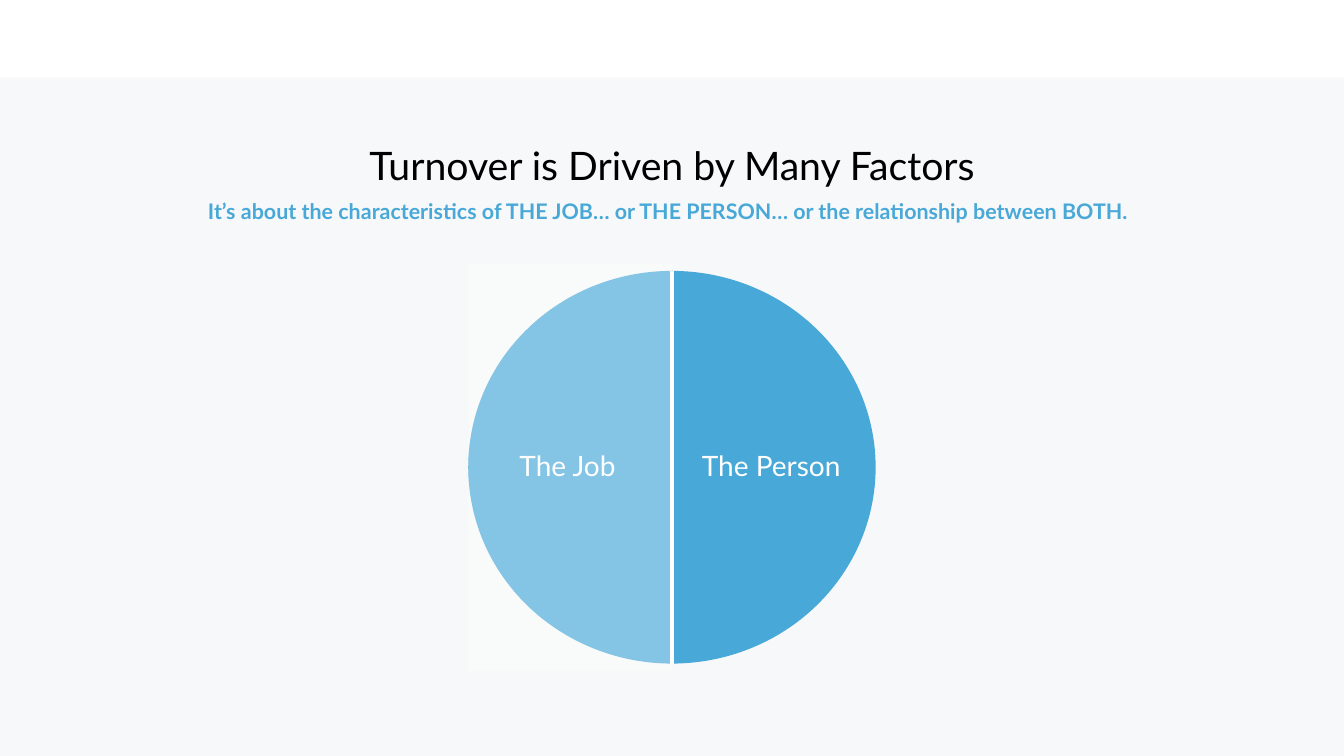
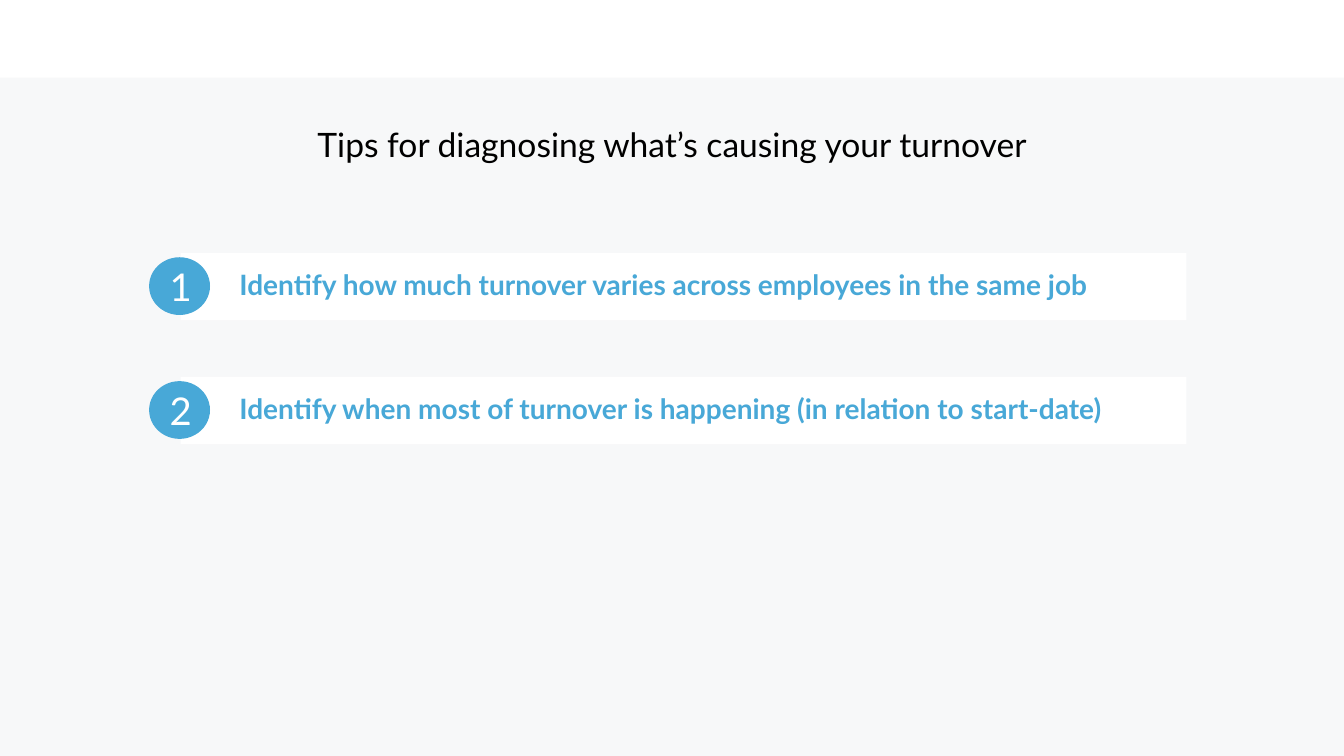
from dataclasses import dataclass

from lxml import etree
from pptx import Presentation, util as u
from pptx.dml import color
from pptx.enum import shapes, text
from pptx.oxml import ns

PX = 9525
SLIDE_W, SLIDE_H, BAND_H = 1280, 720, 74


@dataclass(frozen=True)
class Theme:
    """Colours, font and type sizes shared by the slides."""
    page: str = "F7F8F9"
    white: str = "FFFFFF"
    ink: str = "000000"
    blue: str = "48A8D7"
    font: str = "Lato"
    headline: float = 28
    heading: float = 24
    number: float = 27.3
    body: float = 20
    subtitle: float = 15.3


THEME = Theme()
CENTER, LEFT = text.PP_ALIGN.CENTER, text.PP_ALIGN.LEFT
TOP, MIDDLE = text.MSO_ANCHOR.TOP, text.MSO_ANCHOR.MIDDLE


def px(*lengths):
    """Turn px lengths into EMU."""
    return [u.Emu(length * PX) for length in lengths]


def rgb(value):
    """Turn a hex string into a colour."""
    return color.RGBColor.from_string(value)


def write(shape, words, size, ink, bold=False, align=CENTER, anchor=TOP,
          inset=(0, 0), spacing=1.0):
    """Put one formatted run into a shape."""
    frame = shape.text_frame
    frame.word_wrap = True
    frame.auto_size = text.MSO_AUTO_SIZE.NONE
    frame.vertical_anchor = anchor
    frame.margin_left, frame.margin_top = px(*inset)
    frame.margin_right, frame.margin_bottom = px(*inset)
    paragraph = frame.paragraphs[0]
    paragraph.alignment = align
    paragraph.line_spacing = spacing
    run = paragraph.add_run()
    run.text = words
    font = run.font
    font.name, font.size, font.bold = THEME.font, u.Pt(size), bold
    font.color.rgb = rgb(ink)


def add_text(parent, box, words, size, ink, **style):
    """Add a text box."""
    write(parent.add_textbox(*px(*box)), words, size, ink, **style)


def add_filled(parent, kind, box, fill):
    """Add a flat shape without outline."""
    shape = parent.add_shape(kind, *px(*box))
    shape.shadow.inherit = False
    shape.fill.solid()
    shape.fill.fore_color.rgb = rgb(fill)
    shape.line.fill.background()
    return shape


def set_title(slide, box, words, size, spacing):
    """Place and format the title placeholder."""
    title = slide.shapes.title
    title.left, title.top, title.width, title.height = px(*box)
    write(title, words, size, THEME.ink, inset=(11, 11), spacing=spacing)


def set_master(prs, slide):
    """Give the master its background and top band."""
    master = prs.slide_master
    master.background.fill.solid()
    master.background.fill.fore_color.rgb = rgb(THEME.page)
    band = add_filled(slide.shapes, shapes.MSO_SHAPE.RECTANGLE,
                      (0, 0, SLIDE_W, BAND_H), THEME.white)
    master.shapes._spTree.insert(2, band._element)


def add_split_circle(slide, box, labels):
    """Draw a circle in two halves, the left one lightened, with labels."""
    left, top, width, height = box
    half, overhang, inset, label_h = width // 2, 7, 15, 38
    add_filled(slide.shapes, shapes.MSO_SHAPE.OVAL, box, THEME.blue)
    veil = add_filled(slide.shapes, shapes.MSO_SHAPE.RECTANGLE,
                      (left, top - overhang, half, height + 2 * overhang), THEME.white)
    veil_color = veil._element.spPr.find(ns.qn("a:solidFill"))[0]
    etree.SubElement(veil_color, ns.qn("a:alpha"), val="33000")
    middle = left + half
    divider = slide.shapes.add_connector(
        shapes.MSO_CONNECTOR.STRAIGHT, *px(middle, top, middle, top + height))
    divider.line.color.rgb = rgb(THEME.white)
    divider.line.width = u.Pt(2.25)
    etree.SubElement(divider._element.spPr, ns.qn("a:effectLst"))
    label_top = top + (height - label_h) // 2 - 2
    for side, label in enumerate(labels):
        add_text(slide.shapes,
                 (left + side * half + inset, label_top, half - 35, label_h),
                 label, THEME.body, THEME.white, anchor=MIDDLE, inset=(7, 3))


def add_tip(slide, box, number, words):
    """Draw one numbered tip as a group."""
    left, top, width, height = box
    card_indent, text_indent = 30, 86
    tip = slide.shapes.add_group_shape().shapes
    add_filled(tip, shapes.MSO_SHAPE.RECTANGLE,
               (left + card_indent, top, width - card_indent, height), THEME.white)
    add_text(tip, (left + text_indent, top + 14, width - text_indent, 41),
             words, THEME.body, THEME.blue, bold=True, align=LEFT)
    badge = add_filled(tip, shapes.MSO_SHAPE.OVAL, (left, top + 4, 58, 55), THEME.blue)
    write(badge, str(number), THEME.number, THEME.white, anchor=MIDDLE, inset=(11, 11))


def build_factors(slide):
    """Build the slide on the two sides of turnover."""
    set_title(slide, (109, 112, 1062, 75), "Turnover is Driven by Many Factors",
              THEME.headline, 1.25)
    add_split_circle(slide, (446, 258, 388, 374), ("The Job", "The Person"))
    add_text(slide.shapes, (65, 186, 1143, 60),
             "It’s about the characteristics of THE JOB… or THE PERSON… "
             "or the relationship between BOTH.",
             THEME.subtitle, THEME.blue, bold=True, inset=(7, 3))


def build_tips(slide):
    """Build the slide of numbered tips."""
    set_title(slide, (109, 101, 1062, 60),
              "Tips for diagnosing what’s causing your turnover", THEME.heading, 1.15)
    tips = ("Identify how much turnover varies across employees in the same job",
            "Identify when most of turnover is happening (in relation to start-date)")
    first_top, pitch = 241, 118
    for row, words in enumerate(tips):
        add_tip(slide, (142, first_top + row * pitch, 988, 64), row + 1, words)


def main():
    """Build and save the presentation."""
    prs = Presentation()
    prs.slide_width, prs.slide_height = px(SLIDE_W, SLIDE_H)
    title_only = prs.slide_layouts[5]
    factors, tips = (prs.slides.add_slide(title_only) for _ in range(2))
    set_master(prs, factors)
    build_factors(factors)
    build_tips(tips)
    prs.save("out.pptx")


if __name__ == "__main__":
    main()
